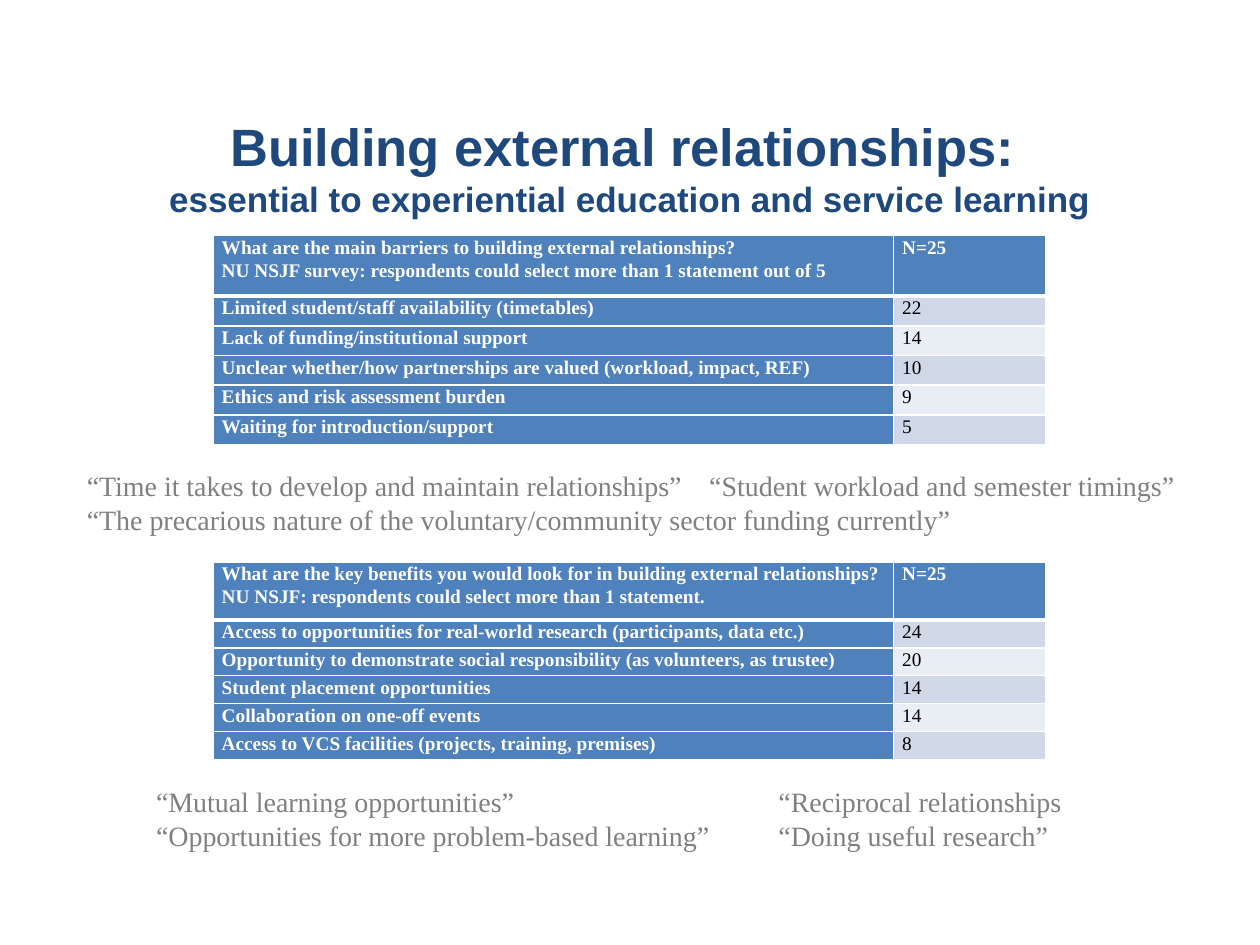
import dataclasses

import lxml.etree
import pptx
import pptx.dml.color
import pptx.enum.text
import pptx.oxml
import pptx.oxml.ns
import pptx.util


@dataclasses.dataclass
class Theme:
    """Colours, fonts and type sizes of the slide."""
    navy: str = "1F497D"
    blue: str = "4F81BD"
    white: str = "FFFFFF"
    black: str = "000000"
    gray: str = "808080"
    bands: tuple = ("D0D8E8", "E9EDF4")
    sans: str = "Arial"
    serif: str = "Times New Roman"
    head: int = 30
    sub: int = 20
    quote: int = 16
    body: int = 11


class Deck:
    """Slide builder on a grid of 100 columns by 75 rows."""

    def __init__(self, theme):
        self.theme = theme
        self.prs = pptx.Presentation()
        self.prs.slide_width = pptx.util.Inches(10)
        self.prs.slide_height = pptx.util.Inches(7.5)
        self.unit = self.prs.slide_width // 100
        self.slide = self.prs.slides.add_slide(self.prs.slide_layouts[5])

    def span(self, *cells):
        """Turn grid cells into lengths."""
        return [pptx.util.Emu(round(cell * self.unit)) for cell in cells]

    def style(self, font, name, size, color, bold=False):
        """Format one font."""
        font.name, font.size, font.bold = name, pptx.util.Pt(size), bold
        font.color.rgb = pptx.dml.color.RGBColor.from_string(color)

    def title(self, box, main, sub):
        """Fill and place the title, with a smaller second line."""
        look, shape = self.theme, self.slide.shapes.title
        shape.left, shape.top, shape.width, shape.height = self.span(*box)
        frame = shape.text_frame
        frame.vertical_anchor = pptx.enum.text.MSO_ANCHOR.MIDDLE
        para = frame.paragraphs[0]
        para.alignment = pptx.enum.text.PP_ALIGN.CENTER
        self.style(para.font, look.sans, look.head, look.navy, True)
        for text, size in ((main, look.head), (sub, look.sub)):
            if para.runs:
                para.add_line_break()
            run = para.add_run()
            run.text = text
            self.style(run.font, look.sans, size, look.navy, True)

    def quotes(self, box, lines, stop):
        """Add lines of quotes whose second column starts at a tab stop."""
        look = self.theme
        frame = self.slide.shapes.add_textbox(*self.span(*box)).text_frame
        frame.word_wrap = True
        for num, line in enumerate(lines):
            para = frame.add_paragraph() if num else frame.paragraphs[0]
            para.text = "\t".join(line)
            tabs = lxml.etree.SubElement(
                para._p.get_or_add_pPr(), pptx.oxml.ns.qn("a:tabLst"))
            tab = lxml.etree.SubElement(tabs, pptx.oxml.ns.qn("a:tab"))
            tab.set("pos", str(self.span(stop)[0]))
            tab.set("algn", "l")
            self.style(para.font, look.serif, look.quote, look.gray)

    def edge(self, cell, top, base):
        """Draw the four borders of a cell."""
        props = cell._tc.get_or_add_tcPr()
        for num, (side, wide) in enumerate(
                (("L", 1), ("R", 1), ("T", top), ("B", base))):
            props.insert(num, pptx.oxml.parse_xml(
                f'<a:ln{side} {pptx.oxml.ns.nsdecls("a")} w="{pptx.util.Pt(wide)}">'
                f'<a:solidFill><a:srgbClr val="{self.theme.white}"/></a:solidFill>'
                f'</a:ln{side}>'))

    def cell(self, cell, text, fill, color, bold):
        """Fill a cell and format its text."""
        look = self.theme
        cell.fill.solid()
        cell.fill.fore_color.rgb = pptx.dml.color.RGBColor.from_string(fill)
        cell.margin_left = cell.margin_right = pptx.util.Inches(0.07)
        cell.margin_top = cell.margin_bottom = 0
        cell.text = text
        for para in cell.text_frame.paragraphs:
            para.line_spacing = 1.07
            self.style(para.font, look.serif, look.body, color, bold)

    def table(self, box, cols, head, rows):
        """Add a survey table: a tall header over equal rows."""
        look = self.theme
        grid = self.slide.shapes.add_table(
            len(rows) + 1, len(cols), *self.span(*box)).table
        for col, wide in zip(grid.columns, self.span(*cols)):
            col.width = wide
        rest = (box[3] - head) / len(rows)
        for num, row in enumerate([(rows.title, "N=25"), *rows]):
            grid.rows[num].height = self.span(rest if num else head)[0]
            for col, text in enumerate(row):
                plain = num > 0 and col > 0
                fill = look.bands[(num - 1) % 2] if plain else look.blue
                color = look.black if plain else look.white
                item = grid.cell(num, col)
                self.cell(item, text, fill, color, not plain)
                self.edge(item, 3 if num == 1 else 1, 1 if num else 3)


class Survey(list):
    """Answers with their counts under a question."""

    def __init__(self, title, rows):
        super().__init__(rows)
        self.title = title


def main():
    """Build and save the slide."""
    deck = Deck(Theme())
    cols, stop = (54, 12.1), 49.4
    deck.title((5, 8.7, 90, 9.1), "Building external relationships: ",
               "essential to experiential education and service learning")
    deck.table((16.9, 18.7, 66.1, 16.6), cols, 4.8, Survey(
        "What are the main barriers to building external relationships?\n"
        "NU NSJF survey: respondents could select more than 1 statement out of 5",
        [("Limited student/staff availability (timetables)", "22"),
         ("Lack of funding/institutional support", "14"),
         ("Unclear whether/how partnerships are valued (workload, impact, REF)", "10"),
         ("Ethics and risk assessment burden", "9"),
         ("Waiting for introduction/support", "5")]))
    deck.table((16.9, 44.6, 66.1, 15.7), cols, 4.6, Survey(
        "What are the key benefits you would look for in building external "
        "relationships? NU NSJF: respondents could select more than 1 statement.",
        [("Access to opportunities for real-world research (participants, data etc.)", "24"),
         ("Opportunity to demonstrate social responsibility (as volunteers, as trustee)", "20"),
         ("Student placement opportunities", "14"),
         ("Collaboration on one-off events", "14"),
         ("Access to VCS facilities (projects, training, premises)", "8")]))
    deck.quotes((11.4, 61.8, 75.6, 6.4), [
        ("“Mutual learning opportunities”", "“Reciprocal relationships"),
        ("“Opportunities for more problem-based learning”",
         "“Doing useful research”")], stop)
    deck.quotes((5.9, 36.7, 89.1, 6.4), [
        ("“Time it takes to develop and maintain relationships”",
         "“Student workload and semester timings”"),
        ("“The precarious nature of the voluntary/community sector funding currently”",)],
        stop)
    deck.prs.save("out.pptx")


if __name__ == "__main__":
    main()
